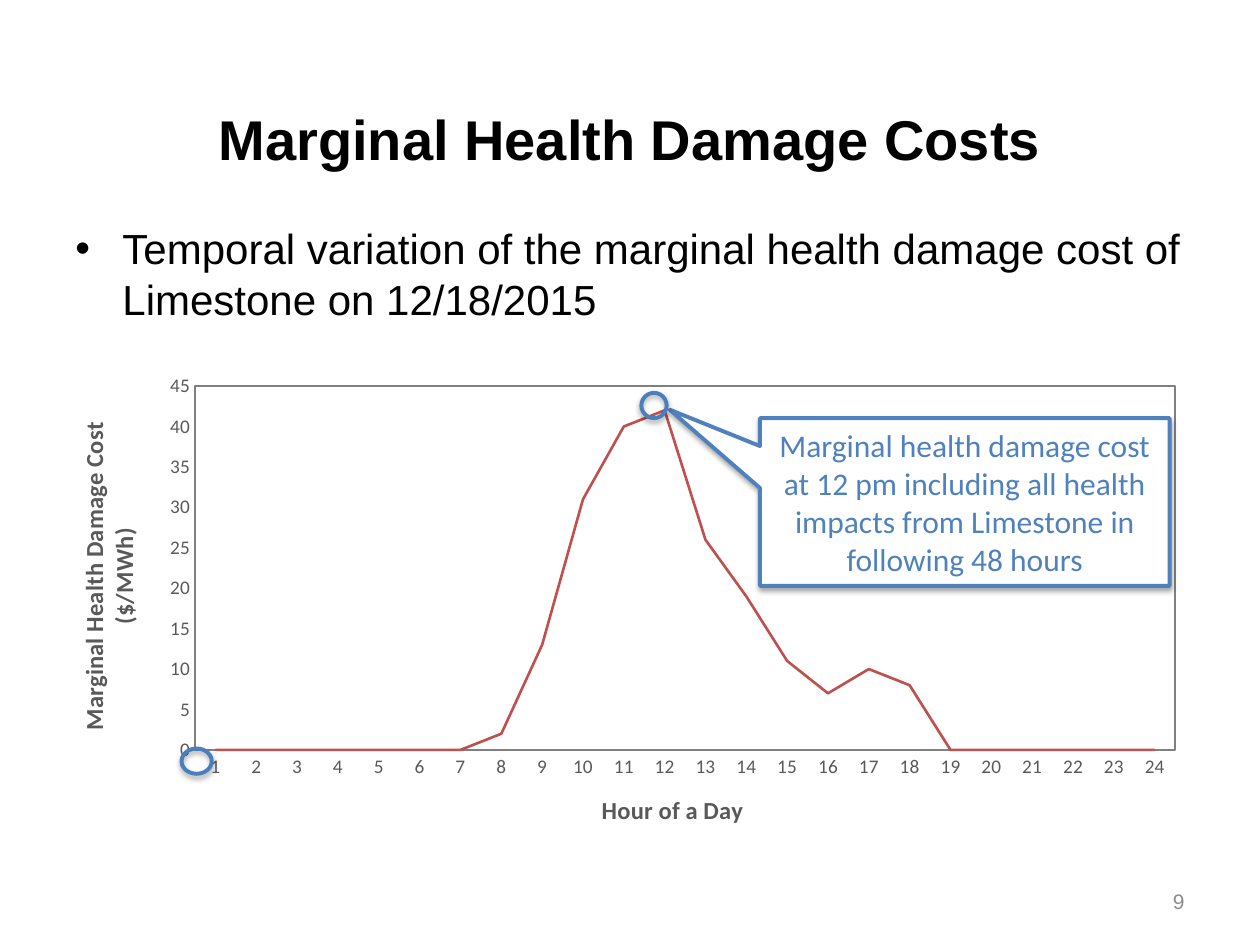
from lxml import etree
from pptx import Presentation
from pptx.chart.data import CategoryChartData
from pptx.dml.color import RGBColor
from pptx.enum.chart import XL_CHART_TYPE, XL_TICK_MARK
from pptx.enum.shapes import MSO_SHAPE as Shape
from pptx.enum.text import MSO_ANCHOR as Anchor, PP_ALIGN as Align
from pptx.oxml import parse_xml
from pptx.oxml.ns import nsdecls, qn
from pptx.util import Cm, Pt

# Content
TITLE = "Marginal Health Damage Costs"
BULLET = ("Temporal variation of the marginal health damage cost of "
          "Limestone on 12/18/2015")
CALLOUT = ("Marginal health damage cost at 12 pm including all health "
           "impacts from Limestone in following 48 hours")
PAGE_NUMBER = "9"
HOUR_TITLE = "Hour of a Day"
COST_TITLE = "Marginal Health Damage Cost ($/MWh)"
HOURLY_COSTS = [0, 0, 0, 0, 0, 0, 0, 2, 13, 31, 40, 42,
                26, 19, 11, 7, 10, 8, 0, 0, 0, 0, 0, 0]

# Places in cm: left, top, width, height
TITLE_AT = (1.27, 1.3, 22.86, 2.97)
BODY_AT = (1.27, 4.37, 22.86, 2.97)
CHART_AT = (1.02, 7.34, 23.11, 9.86)
NUMBER_AT = (18.21, 17.65, 5.92, 1.02)
CALLOUT_AT = (15.32, 8.43, 8.26, 3.38)
RINGS_AT = [(3.66, 15.09, 0.61, 0.51), (12.93, 7.92, 0.51, 0.51)]
PLOT_SHARE = {"x": 0.126, "y": 0.045, "w": 0.855, "h": 0.744}

# Formats
BLUE, RING_BLUE, RED, GREY, AXIS_GREY = "4F81BD", "4B7EBC", "C0504D", "595959", "808080"
TITLE_FONT = {"name": "Arial", "size": Pt(32), "bold": True, "color": "000000"}
BODY_FONT = {"name": "Arial", "size": Pt(24), "color": "000000"}
NUMBER_FONT = {"name": "Arial", "size": Pt(12), "color": "8C8C8C"}
CALLOUT_FONT = {"name": "Calibri", "size": Pt(18), "color": BLUE}
LABEL_FONT = {"name": "Calibri", "size": Pt(11), "bold": False, "color": GREY}
AXIS_TITLE_FONT = {"name": "Calibri", "size": Pt(14), "bold": True, "color": GREY}


def rgb(code):
    return RGBColor.from_string(code)


def set_font(font, style):
    for key, value in style.items():
        if key == "color":
            font.color.rgb = rgb(value)
        else:
            setattr(font, key, value)


def set_line(line, color, points):
    line.color.rgb = rgb(color)
    line.width = Pt(points)


def place(shape, at):
    for key, value in zip(("left", "top", "width", "height"), at):
        setattr(shape, key, Cm(value))


def write(shape, text, style, align, anchor):
    frame = shape.text_frame
    frame.word_wrap = True
    frame.vertical_anchor = anchor
    para = frame.paragraphs[0]
    para.alignment = align
    span = para.add_run()
    span.text = text
    set_font(span.font, style)
    return para


def add_text(page, at, text, style, align, anchor):
    box = page.shapes.add_textbox(*map(Cm, at))
    return write(box, text, style, align, anchor)


def add_shadowed(page, kind, at, line_color):
    shape = page.shapes.add_shape(kind, *map(Cm, at))
    shape.shadow.inherit = False
    shape.fill.background()
    set_line(shape.line, line_color, 2.25)
    effects = shape._element.spPr.find(qn("a:effectLst"))
    effects.append(parse_xml(
        f'<a:outerShdw {nsdecls("a")} blurRad="40000" dist="23000" dir="5400000" '
        'rotWithShape="0"><a:srgbClr val="000000"><a:alpha val="35000"/>'
        '</a:srgbClr></a:outerShdw>'))
    return shape


def add_cost_chart(page):
    data = CategoryChartData()
    data.categories = [str(hour) for hour in range(1, len(HOURLY_COSTS) + 1)]
    data.add_series("Series 1", HOURLY_COSTS)
    chart = page.shapes.add_chart(
        XL_CHART_TYPE.LINE_STACKED, *map(Cm, CHART_AT), data).chart
    chart.has_legend = chart.has_title = False
    set_font(chart.font, LABEL_FONT)

    # Axes
    hours, costs = chart.category_axis, chart.value_axis
    for axis, title in ((hours, HOUR_TITLE), (costs, COST_TITLE)):
        axis.major_tick_mark = axis.minor_tick_mark = XL_TICK_MARK.NONE
        axis.has_major_gridlines = False
        set_font(axis.tick_labels.font, LABEL_FONT)
        span = axis.axis_title.text_frame.paragraphs[0].add_run()
        span.text = title
        set_font(span.font, AXIS_TITLE_FONT)
    set_line(hours.format.line, AXIS_GREY, 0.75)
    costs.format.line.fill.background()
    costs.minimum_scale, costs.maximum_scale, costs.major_unit = 0, 45, 5

    # Line
    plot = chart.plots[0]
    plot.vary_by_categories = False
    series = plot.series[0]
    series.smooth = False
    set_line(series.format.line, RED, 1.5)

    # Plot area: fixed inner frame with a thin border
    area = chart._chartSpace.chart.plotArea
    for old in area.findall(qn("c:layout")):
        area.remove(old)
    layout = parse_xml(f'<c:layout {nsdecls("c")}><c:manualLayout/></c:layout>')
    settings = {"layoutTarget": "inner", "xMode": "edge", "yMode": "edge", **PLOT_SHARE}
    for key, value in settings.items():
        etree.SubElement(layout[0], qn(f"c:{key}")).set("val", str(value))
    area.insert(0, layout)
    area.append(parse_xml(
        f'<c:spPr {nsdecls("c", "a")}><a:noFill/><a:ln w="9525"><a:solidFill>'
        f'<a:srgbClr val="{AXIS_GREY}"/></a:solidFill></a:ln></c:spPr>'))


def main():
    deck = Presentation()
    deck.slide_width, deck.slide_height = Cm(25.4), Cm(19.05)
    page = deck.slides.add_slide(deck.slide_layouts[5])

    # Chart, title and page number
    add_cost_chart(page)
    place(page.shapes.title, TITLE_AT)
    write(page.shapes.title, TITLE, TITLE_FONT, Align.CENTER, Anchor.MIDDLE)
    add_text(page, NUMBER_AT, PAGE_NUMBER, NUMBER_FONT, Align.RIGHT, Anchor.MIDDLE)

    # Bullet with a hanging indent
    para = add_text(page, BODY_AT, BULLET, BODY_FONT, Align.LEFT, Anchor.TOP)
    props = para._p.get_or_add_pPr()
    props.set("marL", str(Cm(0.95)))
    props.set("indent", str(-Cm(0.95)))
    props.append(parse_xml(f'<a:buFont {nsdecls("a")} typeface="Arial"/>'))
    props.append(parse_xml(f'<a:buChar {nsdecls("a")} char="•"/>'))

    # Callout and rings
    callout = add_shadowed(page, Shape.RECTANGULAR_CALLOUT, CALLOUT_AT, BLUE)
    callout.fill.solid()
    callout.fill.fore_color.rgb = rgb("FFFFFF")
    callout.adjustments[0], callout.adjustments[1] = -0.72, -0.55
    write(callout, CALLOUT, CALLOUT_FONT, Align.CENTER, Anchor.MIDDLE)
    for at in RINGS_AT:
        add_shadowed(page, Shape.OVAL, at, RING_BLUE)

    deck.save("out.pptx")


if __name__ == "__main__":
    main()
